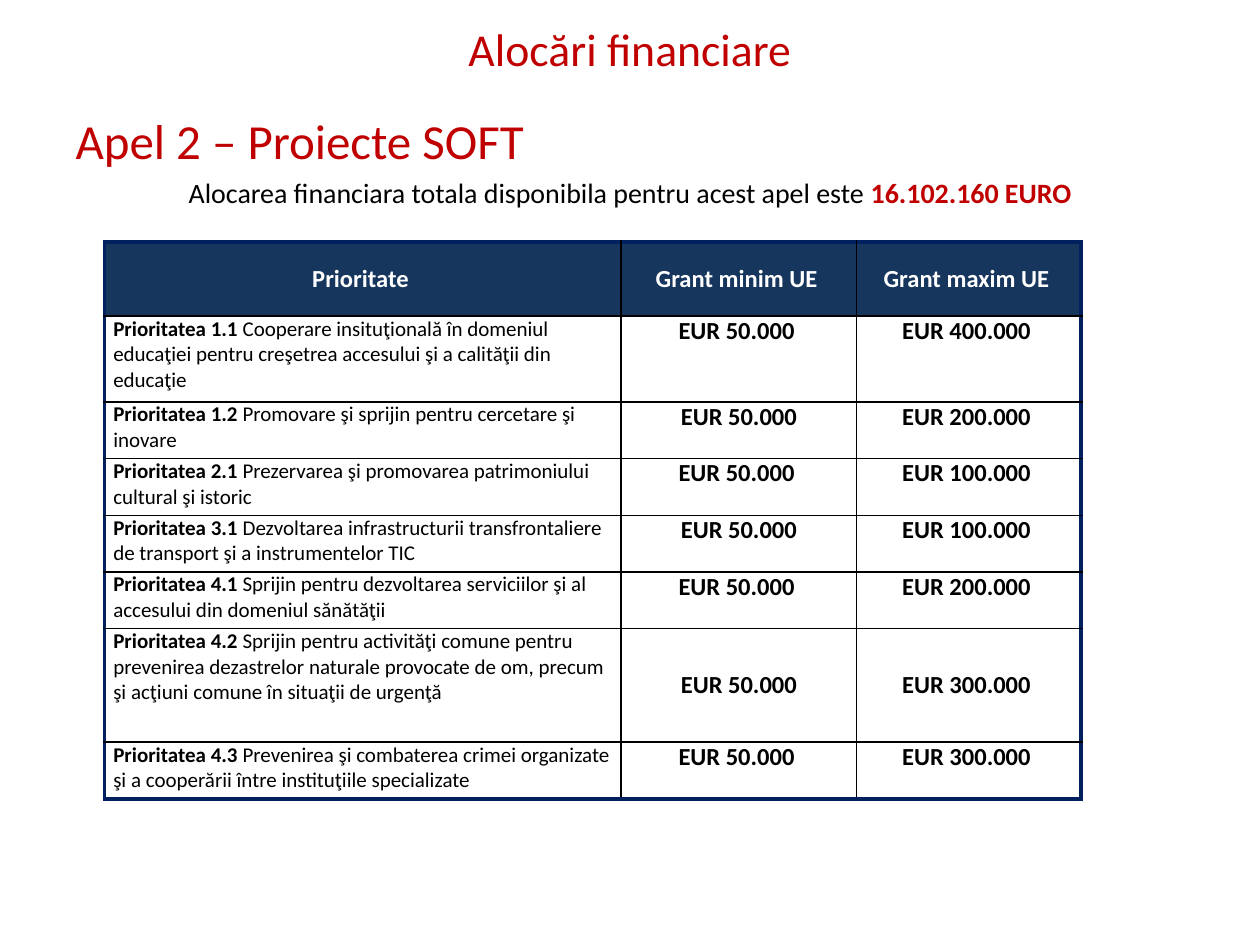
from pptx import Presentation
from pptx.dml.color import RGBColor
from pptx.enum.text import MSO_ANCHOR, MSO_AUTO_SIZE, PP_ALIGN
from pptx.oxml.xmlchemy import OxmlElement
from pptx.util import Pt

RED = RGBColor(0xC0, 0x00, 0x00)
BLACK = RGBColor(0x00, 0x00, 0x00)
WHITE = RGBColor(0xFF, 0xFF, 0xFF)
NAVY = RGBColor(0x00, 0x20, 0x60)
HEADER = RGBColor(0x17, 0x36, 0x5D)

COLUMNS = [295.2, 134.64, 128.16]
ROWS = [42.48, 48.96, 32.4, 32.4, 32.4, 32.4, 64.8, 32.4]
HEADINGS = ["Prioritate", "Grant minim UE", "Grant maxim UE"]
MINIMUM = "EUR 50.000"
PRIORITIES = [
    ("1.1", "Cooperare insituţională în domeniul educaţiei pentru creşetrea "
            "accesului şi a calităţii din educaţie", "EUR 400.000"),
    ("1.2", "Promovare şi sprijin pentru cercetare şi inovare", "EUR 200.000"),
    ("2.1", "Prezervarea şi promovarea patrimoniului cultural şi istoric", "EUR 100.000"),
    ("3.1", "Dezvoltarea infrastructurii transfrontaliere de transport şi a "
            "instrumentelor TIC", "EUR 100.000"),
    ("4.1", "Sprijin pentru dezvoltarea serviciilor şi al accesului din domeniul "
            "sănătăţii", "EUR 200.000"),
    ("4.2", "Sprijin pentru activităţi comune pentru prevenirea dezastrelor naturale "
            "provocate de om, precum şi acţiuni comune în situaţii de urgenţă", "EUR 300.000"),
    ("4.3", "Prevenirea şi combaterea crimei organizate şi a cooperării între "
            "instituţiile specializate", "EUR 300.000"),
]


def set_attrs(obj, **values):
    """Set each named value on an object."""
    for name, value in values.items():
        setattr(obj, name, value)


def add_run(p, text, size, color, bold=False):
    """Append a formatted run to a paragraph."""
    r = p.add_run()
    r.text = text
    set_attrs(r.font, name="Calibri", size=Pt(size), bold=bold)
    r.font.color.rgb = color


def place(sp, box):
    """Put a placeholder in a box and return its text frame."""
    for name, value in zip(("left", "top", "width", "height"), box):
        setattr(sp, name, Pt(value))
    set_attrs(sp.text_frame, auto_size=MSO_AUTO_SIZE.NONE, word_wrap=True)
    return sp.text_frame


def fill_title(sp, box):
    """Write the slide title."""
    tf = place(sp, box)
    tf.vertical_anchor = MSO_ANCHOR.MIDDLE
    p = tf.paragraphs[0]
    p.alignment = PP_ALIGN.CENTER
    add_run(p, "Alocări financiare", 26.1, RED)


def fill_body(sp, box):
    """Write the call name and its total allocation."""
    tf = place(sp, box)
    call, total = tf.paragraphs[0], tf.add_paragraph()
    for p in (call, total):
        pPr = p._p.get_or_add_pPr()
        pPr.set("marL", "0")
        pPr.set("indent", "0")
        pPr.append(OxmlElement("a:buNone"))
    call.space_before = Pt(0)
    set_attrs(total, space_before=Pt(3.2), alignment=PP_ALIGN.CENTER)
    add_run(call, "Apel 2 – Proiecte SOFT", 28, RED)
    add_run(total, "Alocarea financiara totala disponibila pentru acest apel este ", 16, BLACK)
    add_run(total, "16.102.160 EURO", 16, RED, True)


def set_borders(cell, row, col):
    """Draw thick navy outer edges and thin black inner ones."""
    outer = {"L": col == 0, "R": col == len(COLUMNS) - 1,
             "T": row == 0, "B": row == len(ROWS) - 1}
    tcPr = cell._tc.get_or_add_tcPr()
    for side, is_outer in outer.items():
        ln = OxmlElement(f"a:ln{side}")
        ln.set("w", str(Pt(2.25 if is_outer else 1)))
        fill = OxmlElement("a:solidFill")
        clr = OxmlElement("a:srgbClr")
        clr.set("val", str(NAVY if is_outer else BLACK))
        fill.append(clr)
        ln.append(fill)
        tcPr.append(ln)


def centre_text(p, text, color, gap, indented):
    """Write a centred bold cell entry."""
    set_attrs(p, alignment=PP_ALIGN.CENTER, space_before=Pt(gap), space_after=Pt(gap))
    if indented:
        pPr = p._p.get_or_add_pPr()
        pPr.set("marL", str(Pt(4.5)))
        pPr.set("marR", str(Pt(7.2)))
    add_run(p, text, 14, color, True)


def add_grants(slide, box):
    """Add the table of grant limits by priority."""
    shape = slide.shapes.add_table(len(ROWS), len(COLUMNS), *map(Pt, box))
    table = shape.table
    set_attrs(table, first_row=False, horz_banding=False)
    for column, width in zip(table.columns, COLUMNS):
        column.width = Pt(width)
    for row, height in zip(table.rows, ROWS):
        row.height = Pt(height)
    entries = [HEADINGS] + [(n, MINIMUM, top) for n, _, top in PRIORITIES]
    for i, entry in enumerate(entries):
        for j, text in enumerate(entry):
            cell = table.cell(i, j)
            set_attrs(cell, margin_left=Pt(5), margin_right=Pt(5),
                      margin_top=Pt(0), margin_bottom=Pt(0))
            set_borders(cell, i, j)
            p = cell.text_frame.paragraphs[0]
            if i == 0:
                cell.fill.solid()
                cell.fill.fore_color.rgb = HEADER
                cell.vertical_anchor = MSO_ANCHOR.MIDDLE
                centre_text(p, text, WHITE, 6, True)
                continue
            cell.fill.background()
            if j == 0:
                add_run(p, f"Prioritatea {text} ", 12, BLACK, True)
                add_run(p, PRIORITIES[i - 1][1], 12, BLACK)
            else:
                tall = text != "" and entry[0] == "4.2"
                cell.vertical_anchor = MSO_ANCHOR.MIDDLE if tall else MSO_ANCHOR.TOP
                centre_text(p, text, BLACK, 3, j == 2 or i % 2 == 1)


def main():
    """Build and save the slide."""
    prs = Presentation()
    set_attrs(prs, slide_width=Pt(720), slide_height=Pt(540))
    slide = prs.slides.add_slide(prs.slide_layouts[1])
    fill_title(slide.shapes.title, (36, 12.24, 648, 30.24))
    fill_body(slide.placeholders[1], (36, 59.76, 648, 422.64))
    add_grants(slide, (59.76, 138.24, sum(COLUMNS), sum(ROWS)))
    prs.save("out.pptx")


if __name__ == "__main__":
    main()
